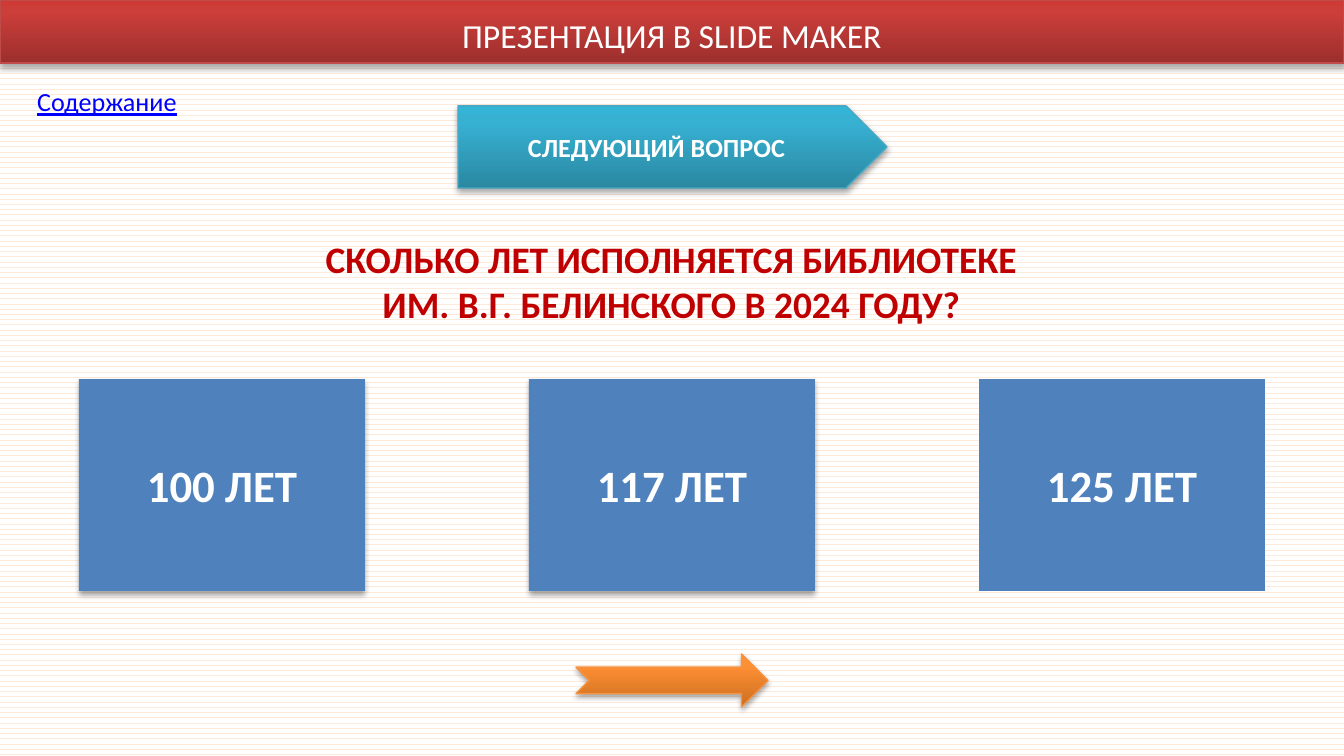
from lxml.etree import SubElement
from pptx import Presentation
from pptx.dml.color import RGBColor
from pptx.enum.dml import MSO_PATTERN
from pptx.enum.shapes import MSO_SHAPE
from pptx.enum.text import MSO_ANCHOR, MSO_AUTO_SIZE, PP_ALIGN
from pptx.oxml.ns import qn
from pptx.util import Emu, Pt

PX = 914400 / 134.4
WIDTH, HEIGHT = 1344, 756

WHITE = RGBColor(0xFF, 0xFF, 0xFF)
BLACK = RGBColor(0x00, 0x00, 0x00)
CREAM = RGBColor(0xFD, 0xEA, 0xDA)
LINK_BLUE = RGBColor(0x00, 0x00, 0xFF)
QUESTION_RED = RGBColor(0xC0, 0x00, 0x00)
CARD_BLUE = RGBColor(0x4F, 0x81, 0xBD)

# Each glossy style: gradient from bottom to top, then the outline
RED = ([RGBColor(0x9C, 0x2F, 0x2D), RGBColor(0xCB, 0x3E, 0x3A),
        RGBColor(0xCE, 0x3B, 0x37)], RGBColor(0xBF, 0x4C, 0x48))
TEAL = ([RGBColor(0x2A, 0x88, 0xA2), RGBColor(0x37, 0xB1, 0xD2),
         RGBColor(0x34, 0xB4, 0xD6)], RGBColor(0x46, 0xAA, 0xC5))
ORANGE = ([RGBColor(0xCC, 0x6E, 0x20), RGBColor(0xFF, 0x90, 0x34),
           RGBColor(0xFF, 0x91, 0x36)], RGBColor(0xF6, 0x92, 0x40))
STOPS = (0, 80, 100)


def emu(*lengths):
    return [Emu(round(length * PX)) for length in lengths]


def add_color(parent, color):
    return SubElement(parent, qn("a:srgbClr"), val=str(color))


def add_shadow(shape):
    effects = shape._element.spPr.find(qn("a:effectLst"))
    outer = SubElement(effects, qn("a:outerShdw"), blurRad=str(Pt(3.1)),
                       dist=str(Pt(1.8)), dir="5400000", rotWithShape="0")
    SubElement(add_color(outer, BLACK), qn("a:alpha"), val="35000")


def add_plain_shape(page, kind, box):
    shape = page.shapes.add_shape(kind, *emu(*box))
    shape.shadow.inherit = False
    return shape


def add_glossy_shape(page, kind, box, style):
    colors, outline = style
    shape = add_plain_shape(page, kind, box)
    shape.fill.gradient()
    shape.fill.gradient_angle = 90
    stops = shape._element.spPr.find(".//" + qn("a:gsLst"))
    for stop in list(stops):
        stops.remove(stop)
    for position, color in zip(STOPS, colors):
        add_color(SubElement(stops, qn("a:gs"), pos=str(position * 1000)), color)
    shape.line.color.rgb = outline
    shape.line.width = Pt(0.75)
    add_shadow(shape)
    return shape


def write(shape, text, size, color, align=PP_ALIGN.CENTER, anchor=MSO_ANCHOR.TOP,
          **font_format):
    frame = shape.text_frame
    frame_format = {"word_wrap": True, "auto_size": MSO_AUTO_SIZE.NONE,
                    "vertical_anchor": anchor}
    for name, value in frame_format.items():
        setattr(frame, name, value)
    para = frame.paragraphs[0]
    para.alignment = align
    span = para.add_run()
    span.text = text
    span.font.color.rgb = color
    for name, value in {"name": "Calibri", "size": Pt(size), **font_format}.items():
        setattr(span.font, name, value)


def add_text(page, box, text, size, color, **text_format):
    write(page.shapes.add_textbox(*emu(*box)), text, size, color, **text_format)


def add_header(page, box):
    left, top, width, height = box
    bar = add_glossy_shape(page, MSO_SHAPE.RECTANGLE, box, RED)
    title = page.shapes.title
    bar._element.addnext(title._element)  # title goes in front of the bar
    places = emu(left, top + 8, width, height - 9)
    for name, value in zip(("left", "top", "width", "height"), places):
        setattr(title, name, value)
    write(title, "ПРЕЗЕНТАЦИЯ В SLIDE MAKER", 18, WHITE)


def add_next_question(page, box):
    plate = add_glossy_shape(page, MSO_SHAPE.PENTAGON, box, TEAL)
    plate.text_frame.margin_left = emu(70)[0]
    plate.text_frame.margin_right = 0
    write(plate, "СЛЕДУЮЩИЙ ВОПРОС", 14, WHITE, align=PP_ALIGN.LEFT,
          anchor=MSO_ANCHOR.MIDDLE, bold=True)


def add_answers(page, box, answers, card_width=286):
    left, top, width, height = box
    pitch = (width - card_width) / (len(answers) - 1)
    for index, (text, raised) in enumerate(answers):
        card = add_plain_shape(page, MSO_SHAPE.RECTANGLE,
                               (left + index * pitch, top, card_width, height))
        card.fill.solid()
        card.fill.fore_color.rgb = CARD_BLUE
        card.line.fill.background()
        if raised:
            add_shadow(card)
        write(card, text, 24, WHITE, anchor=MSO_ANCHOR.MIDDLE, bold=True)


def add_quiz_page(deck):
    page = deck.slides.add_slide(deck.slide_layouts[5])

    # Background with fine waves
    paper = page.background.fill
    paper.patterned()
    paper.pattern = MSO_PATTERN.WAVE
    paper.fore_color.rgb = CREAM
    paper.back_color.rgb = WHITE

    # Header and navigation
    add_header(page, (0, 0, WIDTH, 63))
    add_text(page, (24, 79, 180, 46), "Содержание", 14, LINK_BLUE,
             align=PP_ALIGN.LEFT, underline=True)
    add_next_question(page, (458, 106, 429, 82))

    # Question and answers
    add_text(page, (309, 230, 725, 104),
             "СКОЛЬКО ЛЕТ ИСПОЛНЯЕТСЯ БИБЛИОТЕКЕ ИМ. В.Г. БЕЛИНСКОГО В 2024 ГОДУ?",
             20, QUESTION_RED, bold=True)
    add_answers(page, (79, 379, 1186, 212),
                [("100 ЛЕТ", True), ("117 ЛЕТ", True), ("125 ЛЕТ", False)])

    # Arrow to the next page
    add_glossy_shape(page, MSO_SHAPE.NOTCHED_RIGHT_ARROW, (576, 654, 192, 53), ORANGE)


def main():
    deck = Presentation()
    deck.slide_width, deck.slide_height = emu(WIDTH, HEIGHT)
    add_quiz_page(deck)
    deck.save("out.pptx")


if __name__ == "__main__":
    main()
